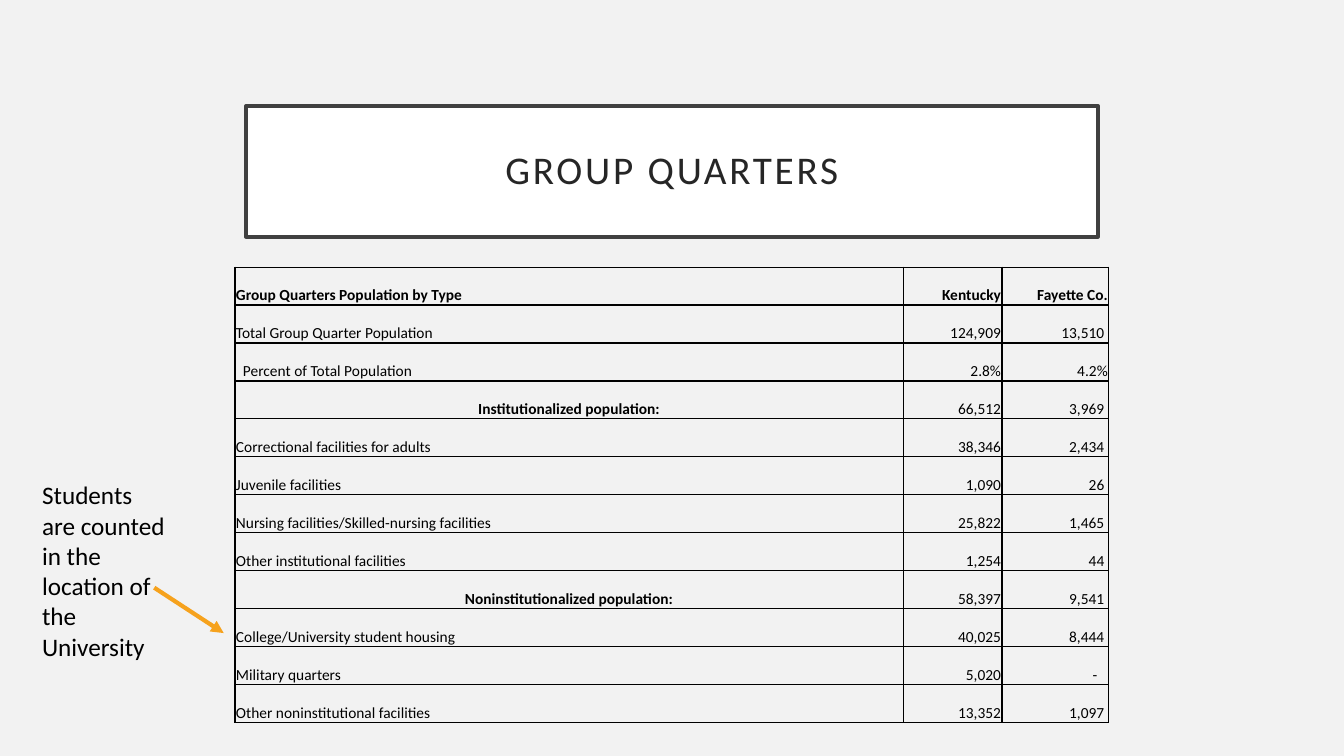
from pptx import Presentation
from pptx.dml.color import RGBColor
from pptx.enum import shapes, text
from pptx.oxml import parse_xml
from pptx.oxml.ns import nsdecls, qn
from pptx.util import Pt

BLACK = RGBColor(0x00, 0x00, 0x00)
INK = RGBColor(0x26, 0x26, 0x26)
FRAME = RGBColor(0x40, 0x40, 0x40)
WHITE = RGBColor(0xFF, 0xFF, 0xFF)
PAPER = RGBColor(0xF2, 0xF2, 0xF2)
ORANGE = RGBColor(0xF6, 0xA2, 0x1D)

LEFT, CENTER, RIGHT = text.PP_ALIGN.LEFT, text.PP_ALIGN.CENTER, text.PP_ALIGN.RIGHT

HEADINGS = ("Group Quarters Population by Type", "Kentucky", "Fayette Co.")
POPULATIONS = [
    ("Total Group Quarter Population", "124,909", "13,510"),
    ("Percent of Total Population", "2.8%", "4.2%"),
    ("Institutionalized population:", "66,512", "3,969"),
    ("Correctional facilities for adults", "38,346", "2,434"),
    ("Juvenile facilities", "1,090", "26"),
    ("Nursing facilities/Skilled-nursing facilities", "25,822", "1,465"),
    ("Other institutional facilities", "1,254", "44"),
    ("Noninstitutionalized population:", "58,397", "9,541"),
    ("College/University student housing", "40,025", "8,444"),
    ("Military quarters", "5,020", "-"),
    ("Other noninstitutional facilities", "13,352", "1,097"),
]
COLUMN_WIDTHS = (477.4, 70.6, 76.3)
ROW_HEIGHT = 27.12
CELL_INSET = 0.75


def write(frame, words, size=11, color=BLACK, bold=False, align=LEFT,
          line_spacing=None, tracking=None):
    """Fill a text frame with one formatted paragraph; tracking is in points."""
    paragraph = frame.paragraphs[0]
    paragraph.alignment = align
    paragraph.line_spacing = line_spacing
    run = paragraph.add_run()
    run.text = words
    run.font.name = "Calibri"
    run.font.size = Pt(size)
    run.font.bold = bold
    run.font.color.rgb = color
    if tracking:
        run.font._element.set("spc", str(tracking * 100))


def add_borders(cell, width=1, color=BLACK):
    properties = cell._tc.get_or_add_tcPr()
    for position, side in enumerate(("lnL", "lnR", "lnT", "lnB")):
        properties.insert(position, parse_xml(
            f'<a:{side} {nsdecls("a")} w="{Pt(width)}"><a:solidFill>'
            f'<a:srgbClr val="{color}"/></a:solidFill></a:{side}>'))


class SlideBuilder:
    def __init__(self, presentation):
        self.slide = presentation.slides.add_slide(presentation.slide_layouts[5])
        self.slide.background.fill.solid()
        self.slide.background.fill.fore_color.rgb = PAPER

    def title(self, words, left, top, width, height):
        title = self.slide.shapes.title
        title.left, title.top = Pt(left), Pt(top)
        title.width, title.height = Pt(width), Pt(height)
        title.fill.solid()
        title.fill.fore_color.rgb = WHITE
        title.line.color.rgb = FRAME
        title.line.width = Pt(2.5)
        frame = title.text_frame
        frame.auto_size = text.MSO_AUTO_SIZE.NONE
        frame.vertical_anchor = text.MSO_ANCHOR.MIDDLE
        frame.margin_left = frame.margin_right = Pt(14.4)
        frame.margin_top = frame.margin_bottom = Pt(14.4)
        write(frame, words, size=28, color=INK, align=CENTER,
              line_spacing=0.9, tracking=2)

    def population_table(self, left, top):
        rows = [HEADINGS, *POPULATIONS]
        table = self.slide.shapes.add_table(
            len(rows), len(HEADINGS), Pt(left), Pt(top),
            Pt(sum(COLUMN_WIDTHS)), Pt(ROW_HEIGHT * len(rows))).table
        table.first_row = table.horz_banding = False
        for column, width in zip(table.columns, COLUMN_WIDTHS):
            column.width = Pt(width)
        for row, values in enumerate(rows):
            table.rows[row].height = Pt(ROW_HEIGHT)
            for column, value in enumerate(values):
                self.population_cell(table.cell(row, column), value, row, column)

    def population_cell(self, cell, value, row, column):
        """Set a label or figure; whole counts in the last column stand off the edge."""
        subtotal = column == 0 and value.endswith(":")
        left_inset = right_inset = CELL_INSET
        if value.startswith("Percent"):
            left_inset += 5
        if column == 2 and row and not value.endswith("%"):
            right_inset += 7.5 if value == "-" else 2.5
        cell.margin_left, cell.margin_right = Pt(left_inset), Pt(right_inset)
        cell.margin_top, cell.margin_bottom = Pt(CELL_INSET), Pt(0)
        cell.vertical_anchor = text.MSO_ANCHOR.BOTTOM
        cell.fill.background()
        add_borders(cell)
        align = RIGHT if column else CENTER if subtotal else LEFT
        write(cell.text_frame, value, bold=row == 0 or subtotal, align=align)

    def note(self, words, left, top, width, height):
        box = self.slide.shapes.add_textbox(Pt(left), Pt(top), Pt(width), Pt(height))
        box.text_frame.word_wrap = True
        box.text_frame.auto_size = text.MSO_AUTO_SIZE.SHAPE_TO_FIT_TEXT
        write(box.text_frame, words, size=18)

    def arrow(self, x1, y1, x2, y2):
        arrow = self.slide.shapes.add_connector(
            shapes.MSO_CONNECTOR.STRAIGHT, Pt(x1), Pt(y1), Pt(x2), Pt(y2))
        arrow.line.color.rgb = ORANGE
        arrow.line.width = Pt(3)
        arrow.line._get_or_add_ln().append(
            parse_xml(f'<a:tailEnd {nsdecls("a")} type="triangle"/>'))
        properties = arrow._element.spPr
        properties.append(properties.makeelement(qn("a:effectLst"), {}))


def main():
    presentation = Presentation()
    presentation.slide_width, presentation.slide_height = Pt(960), Pt(540)
    builder = SlideBuilder(presentation)
    builder.title("GROUP QUARTERS", 175.7, 75.6, 608.6, 93.6)
    builder.population_table(167.8, 190.8)
    builder.note("Students are counted in the location of the University",
                 23, 339.1, 105.8, 116.6)
    builder.arrow(110.2, 419.8, 159.8, 452.2)
    presentation.save("out.pptx")


if __name__ == "__main__":
    main()
